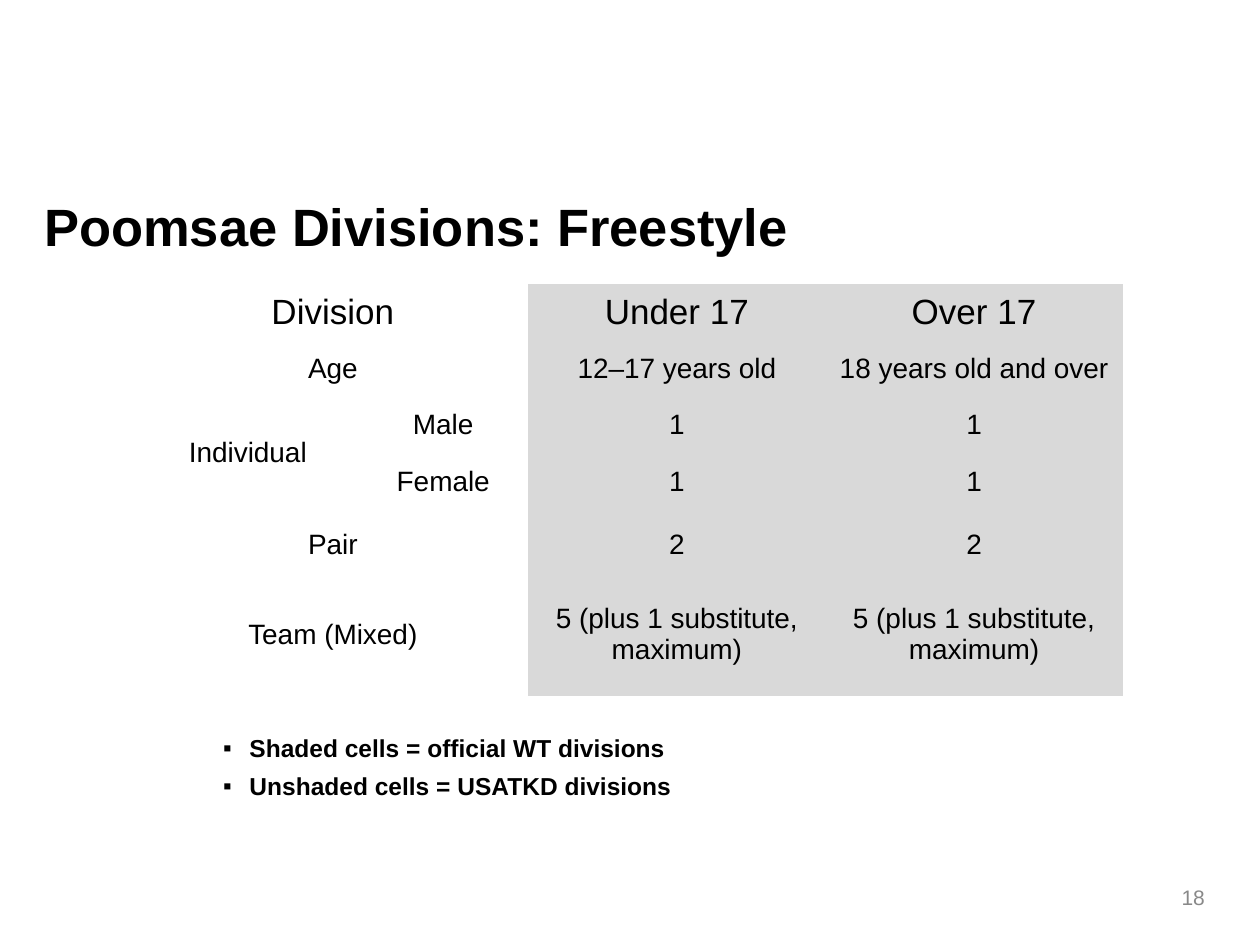
from dataclasses import dataclass

from lxml import etree
from pptx import Presentation
from pptx.dml.color import RGBColor
from pptx.enum.text import MSO_ANCHOR, PP_ALIGN
from pptx.oxml.ns import qn
from pptx.util import Cm, Pt

MIDDLE, TOP = MSO_ANCHOR.MIDDLE, MSO_ANCHOR.TOP
LEFT, CENTER, RIGHT = PP_ALIGN.LEFT, PP_ALIGN.CENTER, PP_ALIGN.RIGHT
BLACK = RGBColor(0x00, 0x00, 0x00)
PAGE_GRAY = RGBColor(0x89, 0x89, 0x89)
OFFICIAL_SHADE = RGBColor(0xD9, 0xD9, 0xD9)
FONT = "Arial"
NO_STYLE_NO_GRID = "{2D5ABB26-0587-4C30-8999-92F81FD0307C}"
COLUMN_WIDTHS = (4.45, 3.43, 5.99, 5.99)
FIRST_SHADED_COLUMN = 2
TEAM_SIZE = "5 (plus 1 substitute, maximum)"


@dataclass(frozen=True)
class DivisionRow:
    """One table row; an empty second label is merged into the first."""
    labels: tuple[str, str]
    values: tuple[str, str]
    height: float = 1.14
    size: int = 16


DIVISIONS = (
    DivisionRow(("Division", ""), ("Under 17", "Over 17"), size=20),
    DivisionRow(("Age", ""), ("12–17 years old", "18 years old and over")),
    DivisionRow(("Individual", "Male"), ("1", "1")),
    DivisionRow(("", "Female"), ("1", "1")),
    DivisionRow(("", ""), ("", ""), height=0.13, size=1),
    DivisionRow(("Pair", ""), ("2", "2")),
    DivisionRow(("Team (Mixed)", ""), (TEAM_SIZE, TEAM_SIZE), height=2.49),
)
LEGEND = ("Shaded cells = official WT divisions", "Unshaded cells = USATKD divisions")


def apply_format(target, values: dict) -> None:
    for attribute, value in values.items():
        setattr(target, attribute, value)


def write(paragraph, text: str, size: int, color=BLACK, bold=False, align=LEFT) -> None:
    paragraph.alignment = align
    if not text:
        etree.SubElement(paragraph._p, qn("a:endParaRPr"), sz=str(size * 100))
        return
    run = paragraph.add_run()
    run.text = text
    apply_format(run.font, {"name": FONT, "size": Pt(size), "bold": bold})
    run.font.color.rgb = color


def add_title(slide) -> None:
    title = slide.shapes.title
    apply_format(title, {"left": Cm(0.64), "top": Cm(3.38),
                         "width": Cm(24.13), "height": Cm(2.34)})
    title.text_frame.vertical_anchor = MIDDLE
    write(title.text_frame.paragraphs[0], "Poomsae Divisions: Freestyle", 30, bold=True)


def add_divisions(slide) -> None:
    frame = slide.shapes.add_table(
        len(DIVISIONS), len(COLUMN_WIDTHS), Cm(2.77), Cm(5.72),
        Cm(sum(COLUMN_WIDTHS)), Cm(sum(row.height for row in DIVISIONS)))
    table = frame.table
    apply_format(table, {"first_row": False, "horz_banding": False})
    table._tbl.tblPr.find(qn("a:tableStyleId")).text = NO_STYLE_NO_GRID
    for column, width in zip(table.columns, COLUMN_WIDTHS):
        column.width = Cm(width)

    for row_index, division in enumerate(DIVISIONS):
        table.rows[row_index].height = Cm(division.height)
        for column_index, text in enumerate(division.labels + division.values):
            cell = table.cell(row_index, column_index)
            apply_format(cell, {"margin_left": Cm(0.2), "margin_right": Cm(0.2),
                                "margin_top": 0, "margin_bottom": 0,
                                "vertical_anchor": MIDDLE})
            if column_index >= FIRST_SHADED_COLUMN:
                cell.fill.solid()
                cell.fill.fore_color.rgb = OFFICIAL_SHADE
            else:
                cell.fill.background()
            write(cell.text_frame.paragraphs[0], text, division.size, align=CENTER)
        if not division.labels[1]:
            table.cell(row_index, 0).merge(table.cell(row_index, 1))
        if not any(division.values):
            table.cell(row_index, 2).merge(table.cell(row_index, 3))
        if division.labels[1] and not division.labels[0]:
            table.cell(row_index - 1, 0).merge(table.cell(row_index, 0))


def add_legend(slide) -> None:
    box = slide.shapes.add_textbox(Cm(3.81), Cm(14.53), Cm(19.05), Cm(2.54))
    text_frame = box.text_frame
    apply_format(text_frame, {"word_wrap": True, "vertical_anchor": TOP,
                              "margin_left": Cm(0.25), "margin_right": Cm(0.25),
                              "margin_top": Cm(0.25), "margin_bottom": Cm(0.25)})
    for index, text in enumerate(LEGEND):
        paragraph = text_frame.add_paragraph() if index else text_frame.paragraphs[0]
        properties = paragraph._p.get_or_add_pPr()
        properties.set("marL", str(Cm(0.97)))
        properties.set("indent", str(-Cm(0.53)))
        etree.SubElement(properties, qn("a:buFont"), typeface=FONT)
        etree.SubElement(properties, qn("a:buChar"), char="▪")
        if index:
            paragraph.space_before = Pt(4.8)
        write(paragraph, text, 14, bold=True)


def add_page_number(slide) -> None:
    box = slide.shapes.add_textbox(Cm(18.62), Cm(17.58), Cm(5.92), Cm(1.02))
    apply_format(box.text_frame, {"word_wrap": True, "vertical_anchor": MIDDLE})
    write(box.text_frame.paragraphs[0], "18", 12, color=PAGE_GRAY, align=RIGHT)


def main() -> None:
    presentation = Presentation()
    apply_format(presentation, {"slide_width": Cm(25.4), "slide_height": Cm(19.05)})
    slide = presentation.slides.add_slide(presentation.slide_layouts[5])
    add_title(slide)
    add_page_number(slide)
    add_legend(slide)
    add_divisions(slide)
    presentation.save("out.pptx")


if __name__ == "__main__":
    main()
